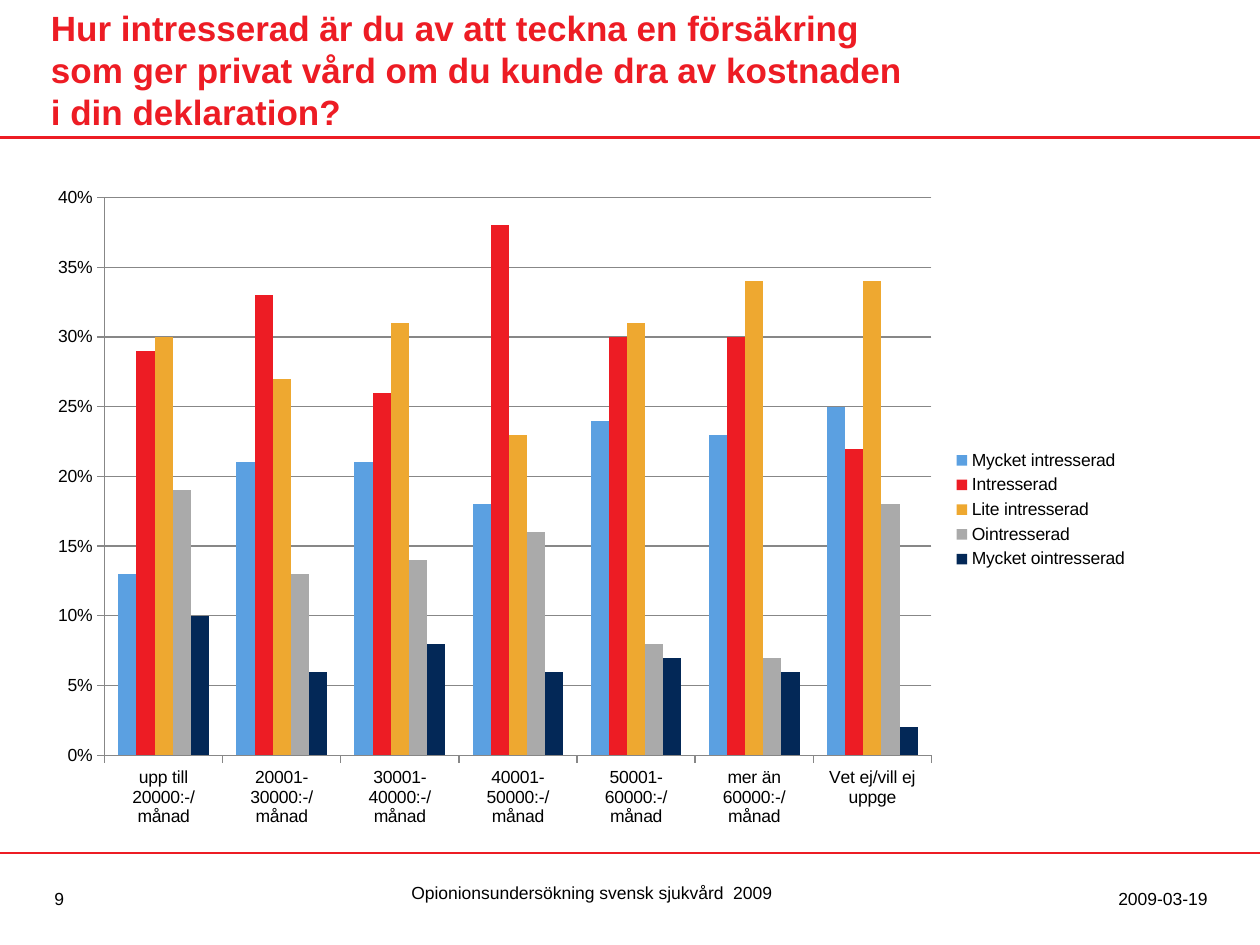
from dataclasses import dataclass

from lxml.etree import SubElement
from pptx import Presentation
from pptx.chart.data import CategoryChartData
from pptx.dml.color import RGBColor
from pptx.enum.chart import XL_CHART_TYPE, XL_LEGEND_POSITION, XL_TICK_MARK
from pptx.enum.shapes import MSO_CONNECTOR
from pptx.enum.text import MSO_ANCHOR, PP_ALIGN
from pptx.oxml import parse_xml
from pptx.oxml.ns import nsdecls, qn
from pptx.util import Pt


@dataclass(frozen=True)
class Theme:
    font: str = "Arial"
    red: str = "ED1C24"
    black: str = "000000"
    grid: str = "878787"
    bars: tuple = ("5BA0E1", "ED1C24", "EEA830", "AAAAAA", "032857")
    head: int = 20
    body: int = 10


WIDTH, HEIGHT = 720, 540
GROUPS = ["upp till 20000:-/ månad", "20001-30000:-/ månad",
          "30001-40000:-/ månad", "40001-50000:-/ månad",
          "50001-60000:-/ månad", "mer än 60000:-/ månad",
          "Vet ej/vill ej uppge"]
ANSWERS = {
    "Mycket intresserad": (13, 21, 21, 18, 24, 23, 25),
    "Intresserad": (29, 33, 26, 38, 30, 30, 22),
    "Lite intresserad": (30, 27, 31, 23, 31, 34, 34),
    "Ointresserad": (19, 13, 14, 16, 8, 7, 18),
    "Mycket ointresserad": (10, 6, 8, 6, 7, 6, 2),
}


def place(plot, x, y, w, h):
    """Fix the inner plot area, as fractions of the chart."""
    old = plot.find(qn("c:layout"))
    if old is not None:
        plot.remove(old)
    marks = "".join(f'<c:{tag} val="{val}"/>' for tag, val in (
        ("layoutTarget", "inner"), ("xMode", "edge"), ("yMode", "edge"),
        ("x", x), ("y", y), ("w", w), ("h", h)))
    plot.insert(0, parse_xml(
        f'<c:layout {nsdecls("c")}><c:manualLayout>{marks}'
        '</c:manualLayout></c:layout>'))


class Page:
    def __init__(self, slide, theme):
        self.slide = slide
        self.theme = theme

    def style(self, font, size, color, bold=False):
        font.name = self.theme.font
        font.size = Pt(size)
        font.bold = bold
        font.color.rgb = RGBColor.from_string(color)

    def stroke(self, line, color, width):
        line.color.rgb = RGBColor.from_string(color)
        line.width = Pt(width)

    def rule(self, y):
        line = self.slide.shapes.add_connector(
            MSO_CONNECTOR.STRAIGHT, 0, Pt(y), Pt(WIDTH), Pt(y))
        self.stroke(line.line, self.theme.red, 1.5)
        SubElement(line._element.spPr, qn("a:effectLst"))

    def text(self, words, box, align=PP_ALIGN.LEFT):
        frame = self.slide.shapes.add_textbox(*map(Pt, box)).text_frame
        frame.word_wrap = True
        frame.vertical_anchor = MSO_ANCHOR.MIDDLE
        frame.text = words
        para = frame.paragraphs[0]
        para.alignment = align
        self.style(para.runs[0].font, self.theme.body, self.theme.black)
        return frame

    def title(self, words, box):
        frame = self.text(words, box)
        frame.vertical_anchor = MSO_ANCHOR.TOP
        para = frame.paragraphs[0]
        para.line_spacing = Pt(24)
        self.style(para.runs[0].font, self.theme.head, self.theme.red, True)

    def chart(self, groups, answers, box):
        data = CategoryChartData(number_format="0\\%")
        data.categories = groups
        for name, vals in answers.items():
            data.add_series(name, vals)
        chart = self.slide.shapes.add_chart(
            XL_CHART_TYPE.COLUMN_CLUSTERED, *map(Pt, box), data).chart
        self.style(chart.font, self.theme.body, self.theme.black)
        chart.has_title = False
        chart.has_legend = True
        chart.legend.position = XL_LEGEND_POSITION.RIGHT
        chart.legend.include_in_layout = False

        plot = chart.plots[0]
        plot.vary_by_categories = False
        plot.gap_width = 150
        plot.overlap = 0
        for series, color in zip(plot.series, self.theme.bars):
            series.format.fill.solid()
            series.format.fill.fore_color.rgb = RGBColor.from_string(color)

        for axis in (chart.category_axis, chart.value_axis):
            axis.major_tick_mark = XL_TICK_MARK.OUTSIDE
            self.stroke(axis.format.line, self.theme.grid, 0.75)
        scale = chart.value_axis
        scale.minimum_scale, scale.maximum_scale = 0, 40
        scale.major_unit = 5
        scale.has_major_gridlines = True
        self.stroke(scale.major_gridlines.format.line, self.theme.grid, 0.75)
        scale.tick_labels.number_format = "0\\%"
        scale.tick_labels.number_format_is_linked = False
        place(chart._chartSpace.chart.plotArea, 0.06, 0.03, 0.75, 0.84)


def main():
    deck = Presentation()
    deck.slide_width, deck.slide_height = Pt(WIDTH), Pt(HEIGHT)
    page = Page(deck.slides.add_slide(deck.slide_layouts[6]), Theme())
    for y in (78.5, 487.5):
        page.rule(y)
    page.title("Hur intresserad är du av att teckna en försäkring som ger "
               "privat vård om du kunde dra av kostnaden i din deklaration?",
               (22, 0, 506, 32.5))
    page.chart(GROUPS, ANSWERS, (22, 101.5, 630, 379.5))
    page.text("9", (24, 503.5, 27, 19.5))
    page.text("Opionionsundersökning svensk sjukvård  2009",
              (168.5, 500.5, 339, 19.5), PP_ALIGN.CENTER)
    page.text("2009-03-19", (571, 503.5, 126, 19.5), PP_ALIGN.RIGHT)
    deck.save("out.pptx")


if __name__ == "__main__":
    main()
